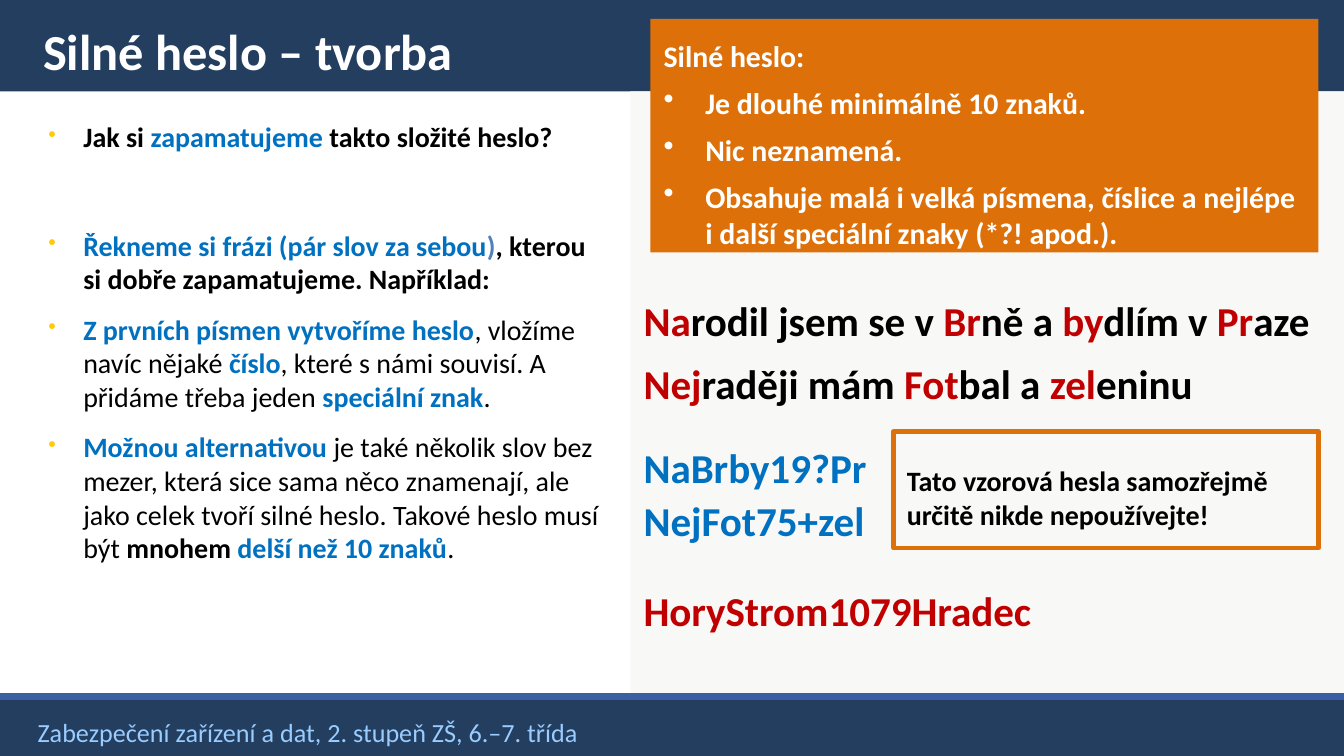
from dataclasses import dataclass

from lxml import etree
from pptx import Presentation
from pptx.dml.color import RGBColor
from pptx.enum.shapes import MSO_CONNECTOR, MSO_SHAPE
from pptx.enum.text import MSO_ANCHOR, MSO_AUTO_SIZE, PP_ALIGN
from pptx.oxml.ns import qn
from pptx.util import Inches, Pt

RECTANGLE = MSO_SHAPE.RECTANGLE
STRAIGHT = MSO_CONNECTOR.STRAIGHT
TOP, MIDDLE = MSO_ANCHOR.TOP, MSO_ANCHOR.MIDDLE
NO_AUTOFIT = MSO_AUTO_SIZE.NONE
LEFT = PP_ALIGN.LEFT

SLIDE_WIDTH, SLIDE_HEIGHT = 10, 5.625


@dataclass(frozen=True)
class Theme:
    font: str = "Calibri"
    navy: str = "233E5F"
    rule: str = "3A5FA3"
    panel: str = "F8F8F6"
    orange: str = "DD7008"
    white: str = "FFFFFF"
    black: str = "000000"
    blue: str = "0070C0"
    soft_blue: str = "4F81BD"
    red: str = "C00000"
    pale_blue: str = "99CCFF"
    yellow: str = "FFCA08"
    title_size: int = 27
    example_size: int = 22
    rules_size: int = 16
    body_size: int = 15
    footer_size: int = 14


THEME = Theme()


def across(percent):
    return Inches(SLIDE_WIDTH * percent / 100)


def down(percent):
    return Inches(SLIDE_HEIGHT * percent / 100)


def area(left, top, width, height):
    return across(left), down(top), across(width), down(height)


def colour(code):
    return RGBColor.from_string(code)


def add_bullet(paragraph, indent, bullet_colour=None, percent=None):
    properties = paragraph._p.get_or_add_pPr()
    properties.set("marL", str(Inches(indent[0])))
    properties.set("indent", str(Inches(indent[1])))
    if bullet_colour:
        holder = etree.SubElement(properties, qn("a:buClr"))
        etree.SubElement(holder, qn("a:srgbClr"), val=bullet_colour)
    if percent:
        etree.SubElement(properties, qn("a:buSzPct"), val=str(percent * 1000))
    etree.SubElement(properties, qn("a:buChar"), char="•")


def write(shape, paragraphs, size, ink=THEME.black, bold=True, gaps=(), bullets_from=None,
          bullet=None, insets=(0.1, 0.05, 0.1, 0.05), anchor=TOP, wrap=True):
    frame = shape.text_frame
    frame.word_wrap = wrap
    frame.auto_size = NO_AUTOFIT
    frame.vertical_anchor = anchor
    (frame.margin_left, frame.margin_top,
     frame.margin_right, frame.margin_bottom) = map(Inches, insets)
    for number, content in enumerate(paragraphs):
        paragraph = frame.add_paragraph() if number else frame.paragraphs[0]
        if bullets_from is not None and number >= bullets_from:
            add_bullet(paragraph, **bullet)
        paragraph.alignment = LEFT
        paragraph.space_before = Pt(gaps[number - 1] if number else 0)
        for words, run_ink, run_bold in content if isinstance(content, list) else [(content, ink, bold)]:
            run = paragraph.add_run()
            run.text = words
            run.font.name = THEME.font
            run.font.size = Pt(size)
            run.font.bold = run_bold
            run.font.color.rgb = colour(run_ink)


def add_block(slide, place, fill=None, outline=None):
    block = slide.shapes.add_shape(RECTANGLE, *area(*place))
    block.shadow.inherit = False
    if fill:
        block.fill.solid()
        block.fill.fore_color.rgb = colour(fill)
    else:
        block.fill.background()
    if outline:
        block.line.color.rgb = colour(outline)
        block.line.width = Pt(2.5)
    else:
        block.line.fill.background()
    return block


def add_text(slide, place, paragraphs, **style):
    write(slide.shapes.add_textbox(*area(*place)), paragraphs, **style)


def add_rule(slide, top):
    rule = slide.shapes.add_connector(STRAIGHT, 0, down(top), across(100), down(top))
    rule.line.color.rgb = colour(THEME.rule)
    rule.line.width = Pt(3.78)
    etree.SubElement(rule._element.spPr, qn("a:effectLst"))


def set_title(slide, place, words):
    title = slide.shapes.title
    title.left, title.top, title.width, title.height = area(*place)
    write(title, [words], size=THEME.title_size, ink=THEME.white,
          insets=(0.1, 0.05, 0.05, 0.05), anchor=MIDDLE)
    slide.shapes._spTree.append(title._element)


def strong(words):
    return words, THEME.black, True


def plain(words):
    return words, THEME.black, False


def key(words):
    return words, THEME.blue, True


def picked(words):
    return words, THEME.red, True


def add_advice(slide):
    advice = [
        [strong("Jak si "), key("zapamatujeme "), strong("takto složité heslo?")],
        [key("Řekneme si frázi (pár slov za sebou"), (")", THEME.soft_blue, True),
         strong(", kterou si dobře zapamatujeme. Například:")],
        [key("Z prvních písmen vytvoříme heslo"), plain(", vložíme navíc nějaké "), key("číslo"),
         plain(", které s námi souvisí. A přidáme třeba jeden "), key("speciální znak"), plain(".")],
        [key("Možnou alternativou "),
         plain("je také několik slov bez mezer, která sice sama něco znamenají, "
               "ale jako celek tvoří silné heslo. Takové heslo musí být "),
         strong("mnohem "), key("delší než 10 znaků"), plain(".")],
    ]
    add_text(slide, (2, 14.1, 43.8, 77.9), advice, size=THEME.body_size, gaps=(40, 9, 9),
             bullets_from=0, insets=(0.06, 0.1, 0.1, 0.05),
             bullet={"indent": (0.36, -0.26), "bullet_colour": THEME.yellow, "percent": 80})


def add_examples(slide):
    examples = [
        (38.2, 52.1, [picked("Na"), strong("rodil jsem se v "), picked("Br"), strong("ně a "),
                      picked("by"), strong("dlím v "), picked("Pr"), strong("aze")]),
        (46.6, 43.7, [picked("Nej"), strong("raději mám "), picked("Fot"), strong("bal a "),
                      picked("zel"), strong("eninu")]),
        (57.6, 18.8, [key("NaBrby19?Pr")]),
        (64.7, 18.7, [key("NejFot75+zel")]),
        (76.6, 31.2, [picked("HoryStrom1079Hradec")]),
    ]
    for top, width, example in examples:
        add_text(slide, (46.9, top, width, 8.4), [example], size=THEME.example_size, wrap=False)


def add_warning(slide):
    warning = add_block(slide, (66.5, 57.1, 31.6, 15.4), outline=THEME.orange)
    write(warning, ["Tato vzorová hesla samozřejmě určitě nikde nepoužívejte!"],
          size=THEME.body_size, insets=(0.1, 0.16, 0.1, 0.05), anchor=MIDDLE)


def add_password_rules(slide):
    rules = [
        "Silné heslo:",
        "Je dlouhé minimálně 10 znaků.",
        "Nic neznamená.",
        "Obsahuje malá i velká písmena, číslice a nejlépe i další speciální znaky (*?! apod.).",
    ]
    write(add_block(slide, (48.4, 2.5, 49.7, 30.9), fill=THEME.orange), rules,
          size=THEME.rules_size, ink=THEME.white, gaps=(6, 6, 6), bullets_from=1,
          bullet={"indent": (0.31, -0.31)}, insets=(0.1, 0.14, 0.1, 0))


def main():
    deck = Presentation()
    deck.slide_width, deck.slide_height = across(100), down(100)
    slide = deck.slides.add_slide(deck.slide_layouts[5])
    add_block(slide, (0, 92.2, 100, 7.8), fill=THEME.navy)
    add_block(slide, (0, 0, 100, 12.1), fill=THEME.navy)
    add_text(slide, (2.2, 93.7, 86.2, 6.4), ["Zabezpečení zařízení a dat, 2. stupeň ZŠ, 6.–7. třída"],
             size=THEME.footer_size, ink=THEME.pale_blue, bold=False,
             insets=(0.06, 0.05, 0.03, 0.05), anchor=MIDDLE)
    add_block(slide, (46.9, 12.1, 53.1, 80.1), fill=THEME.panel)
    set_title(slide, (2.2, 1.1, 95.6, 11), "Silné heslo – tvorba")
    add_advice(slide)
    add_rule(slide, 92.1)
    add_examples(slide)
    add_warning(slide)
    add_password_rules(slide)
    deck.save("out.pptx")


if __name__ == "__main__":
    main()
